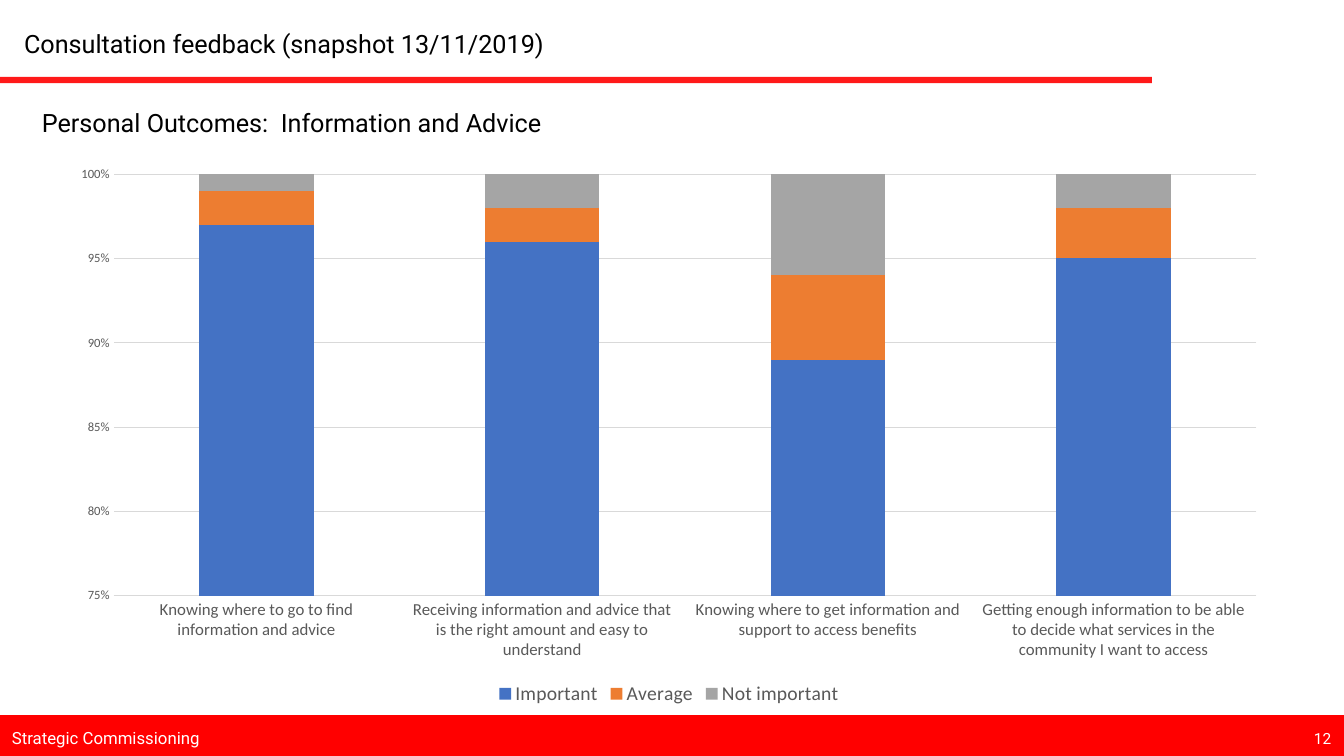
import pptx
import pptx.chart.data
import pptx.dml.color
import pptx.enum.chart
import pptx.enum.shapes
import pptx.enum.text
import pptx.oxml
import pptx.oxml.ns
import pptx.util

SLIDE_SIZE = (1344, 756)
EMU_PER_PX = 12192000 / 1344
RED, WHITE, BLACK, GRID, LABEL = "FF0000", "FFFFFF", "000000", "D9D9D9", "595959"

TITLE = ("Consultation feedback (snapshot 13/11/2019)", (14, 23, 549, 40), 18, BLACK)
TEXTS = [
    ("Strategic Commissioning", (2, 718, 235, 40), 12, WHITE),
    ("Personal Outcomes:  Information and Advice", (32, 102, 1118, 40), 18, BLACK),
    ("12", (1304, 724, 40, 29), 11, WHITE),
]
FOOTER_BAR = (0, 716, 1344, 40)
RULE_Y, RULE_END = 80, 1152
CHART_BOX = (57, 156, 1224, 554)
CATEGORIES = [
    "Knowing where to go to find information and advice",
    "Receiving information and advice that is the right amount and easy to understand",
    "Knowing where to get information and support to access benefits",
    "Getting enough information to be able to decide what services in the community I want to access",
]
SERIES = [
    ("Important", (96, 96, 89, 96), "4472C4"),
    ("Average", (2, 2, 5, 3), "ED7D31"),
    ("Not important", (1, 2, 6, 2), "A5A5A5"),
]


def px(length):
    return pptx.util.Emu(round(length * EMU_PER_PX))


def box(lengths):
    return [px(length) for length in lengths]


def color(value):
    return pptx.dml.color.RGBColor.from_string(value)


def style_font(font, name, size, value):
    font.name = name
    font.size = pptx.util.Pt(size)
    font.color.rgb = color(value)


def style_line(line, value, width):
    line.color.rgb = color(value)
    line.width = pptx.util.Pt(width)


def write_text(shape, text, position, size, value):
    shape.left, shape.top, shape.width, shape.height = box(position)
    frame = shape.text_frame
    frame.text = text
    frame.word_wrap = True
    frame.auto_size = pptx.enum.text.MSO_AUTO_SIZE.NONE
    frame.vertical_anchor = pptx.enum.text.MSO_ANCHOR.MIDDLE
    paragraph = frame.paragraphs[0]
    paragraph.alignment = pptx.enum.text.PP_ALIGN.LEFT
    paragraph.line_spacing = 1.0
    style_font(paragraph.font, "Roboto", size, value)


def add_footer_and_rule(slide):
    bar = slide.shapes.add_shape(pptx.enum.shapes.MSO_SHAPE.RECTANGLE, *box(FOOTER_BAR))
    bar.shadow.inherit = False
    bar.fill.solid()
    bar.fill.fore_color.rgb = color(RED)
    style_line(bar.line, RED, 1)

    rule = slide.shapes.add_connector(
        pptx.enum.shapes.MSO_CONNECTOR.STRAIGHT, *box((0, RULE_Y, RULE_END, RULE_Y)))
    style_line(rule.line, RED, 4.5)
    properties = rule._element.spPr
    qn = pptx.oxml.ns.qn
    red = properties.find(".//" + qn("a:srgbClr"))
    red.append(red.makeelement(qn("a:alpha"), {"val": "90000"}))
    properties.append(properties.makeelement(qn("a:effectLst"), {}))


def add_feedback_chart(slide):
    data = pptx.chart.data.CategoryChartData(number_format="0")
    data.categories = CATEGORIES
    for name, values, fill in SERIES:
        data.add_series(name, values)
    kind = pptx.enum.chart.XL_CHART_TYPE.COLUMN_STACKED_100
    chart = slide.shapes.add_chart(kind, *box(CHART_BOX), data).chart
    chart.has_title = False
    style_font(chart.font, "Calibri", 10, BLACK)

    plot = chart.plots[0]
    plot.gap_width = 150
    plot.overlap = 100
    plot.vary_by_categories = False
    for series, (name, values, fill) in zip(plot.series, SERIES):
        series.format.fill.solid()
        series.format.fill.fore_color.rgb = color(fill)

    for axis, size in ((chart.category_axis, 12), (chart.value_axis, 9)):
        axis.major_tick_mark = pptx.enum.chart.XL_TICK_MARK.NONE
        axis.minor_tick_mark = pptx.enum.chart.XL_TICK_MARK.NONE
        style_font(axis.tick_labels.font, "Calibri", size, LABEL)
    style_line(chart.category_axis.format.line, GRID, 0.75)
    axis = chart.value_axis
    axis.minimum_scale = 0.75
    axis.maximum_scale = 1
    axis.major_unit = 0.05
    axis.tick_labels.number_format = "0%"
    axis.tick_labels.number_format_is_linked = False
    axis.format.line.fill.background()
    style_line(axis.major_gridlines.format.line, GRID, 0.75)

    chart.has_legend = True
    chart.legend.position = pptx.enum.chart.XL_LEGEND_POSITION.BOTTOM
    chart.legend.include_in_layout = False
    style_font(chart.legend.font, "Calibri", 14, LABEL)


def main():
    presentation = pptx.Presentation()
    presentation.slide_width, presentation.slide_height = box(SLIDE_SIZE)
    slide = presentation.slides.add_slide(presentation.slide_layouts[5])
    add_footer_and_rule(slide)
    write_text(slide.shapes.title, *TITLE)
    for text, position, size, value in TEXTS:
        write_text(slide.shapes.add_textbox(*box(position)), text, position, size, value)
    add_feedback_chart(slide)
    presentation.save("out.pptx")


if __name__ == "__main__":
    main()
